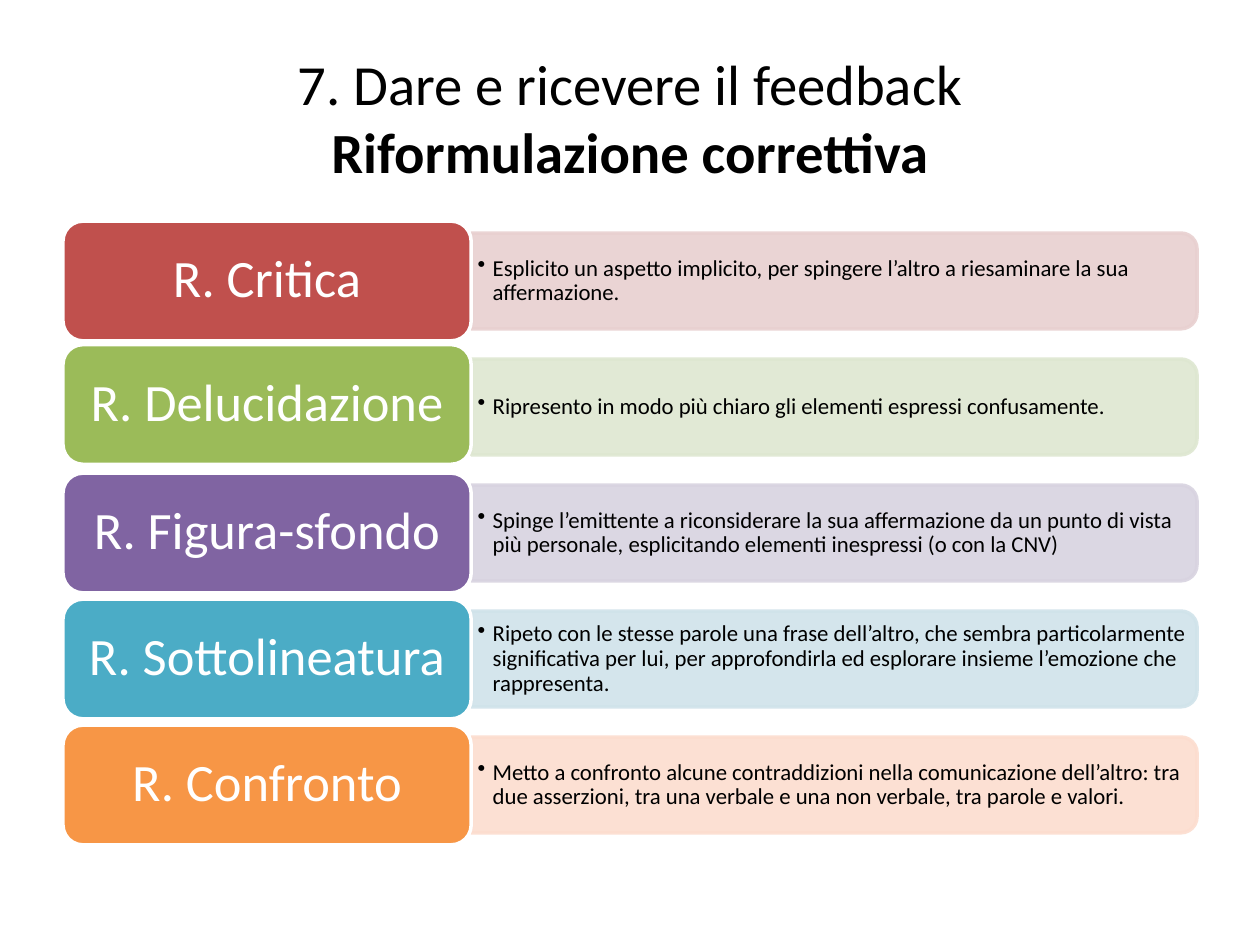
from dataclasses import dataclass

from lxml.etree import SubElement
from pptx import Presentation
from pptx.dml.color import RGBColor
from pptx.enum.shapes import MSO_SHAPE
from pptx.enum.text import MSO_ANCHOR, PP_ALIGN
from pptx.oxml.ns import qn
from pptx.util import Inches, Pt

FONT = "Calibri"
BLACK = RGBColor(0x00, 0x00, 0x00)
WHITE = RGBColor(0xFF, 0xFF, 0xFF)
RED, PALE_RED = RGBColor(0xC0, 0x50, 0x4D), RGBColor(0xE8, 0xD0, 0xD0)
GREEN, PALE_GREEN = RGBColor(0x9B, 0xBB, 0x59), RGBColor(0xDE, 0xE7, 0xD1)
PURPLE, PALE_PURPLE = RGBColor(0x80, 0x64, 0xA2), RGBColor(0xD8, 0xD3, 0xE0)
TEAL, PALE_TEAL = RGBColor(0x4B, 0xAC, 0xC6), RGBColor(0xD0, 0xE3, 0xEA)
ORANGE, PALE_ORANGE = RGBColor(0xF7, 0x96, 0x46), RGBColor(0xFC, 0xDD, 0xCF)

# Grid in inches: a label column and a band column, one row per technique
WIDTH, HEIGHT = 10, 7.5
MARGIN = 0.05 * WIDTH
LABEL_W, LABEL_H = 3.24, 0.95
BAND_X = MARGIN + LABEL_W
BAND_W, BAND_H = WIDTH - MARGIN - BAND_X, 0.76
TEXT_H = 0.69
FIRST_ROW, ROW_PITCH = 2.23, 1.0


@dataclass
class Technique:
    name: str
    description: str
    color: RGBColor
    pale: RGBColor
    label_shift: float = 0


TECHNIQUES = [
    Technique("R. Critica",
              "Esplicito un aspetto implicito, per spingere l’altro a riesaminare "
              "la sua affermazione.", RED, PALE_RED),
    Technique("R. Delucidazione",
              "Ripresento in modo più chiaro gli elementi espressi confusamente.",
              GREEN, PALE_GREEN, label_shift=-0.02),
    Technique("R. Figura-sfondo",
              "Spinge l’emittente a riconsiderare la sua affermazione da un punto di "
              "vista più personale, esplicitando elementi inespressi (o con la CNV)",
              PURPLE, PALE_PURPLE),
    Technique("R. Sottolineatura",
              "Ripeto con le stesse parole una frase dell’altro, che sembra "
              "particolarmente significativa per lui, per approfondirla ed esplorare "
              "insieme l’emozione che rappresenta.", TEAL, PALE_TEAL),
    Technique("R. Confronto",
              "Metto a confronto alcune contraddizioni nella comunicazione dell’altro: "
              "tra due asserzioni, tra una verbale e una non verbale, tra parole e "
              "valori.", ORANGE, PALE_ORANGE),
]


def add_box(s, shape_type, x: float, y: float, w: float, h: float,
            fill: RGBColor, line: RGBColor):
    sp = s.shapes.add_shape(shape_type, Inches(x), Inches(y), Inches(w), Inches(h))
    sp.shadow.inherit = False
    sp.fill.solid()
    sp.fill.fore_color.rgb = fill
    sp.line.color.rgb = line
    sp.line.width = Pt(2)
    return sp


def add_textbox(s, x: float, y: float, w: float, h: float):
    return s.shapes.add_textbox(Inches(x), Inches(y), Inches(w), Inches(h))


def write(sp, text: str, size: float, color: RGBColor, align,
          inset_x: float, inset_y: float, spacing: float):
    tf = sp.text_frame
    tf.word_wrap = True
    tf.vertical_anchor = MSO_ANCHOR.MIDDLE
    tf.margin_left = tf.margin_right = Inches(inset_x)
    tf.margin_top = tf.margin_bottom = Inches(inset_y)
    tf.text = text
    p = tf.paragraphs[0]
    p.alignment = align
    p.line_spacing = spacing
    for r in p.runs:
        r.font.name = FONT
        r.font.size = Pt(size)
        r.font.color.rgb = color
    return p


def add_bullet(p, indent: float) -> None:
    pPr = p._p.get_or_add_pPr()
    pPr.set("marL", str(Inches(indent)))
    pPr.set("indent", str(-Inches(indent)))
    SubElement(pPr, qn("a:buChar")).set("char", "•")


def set_opacity(sp, percent: int) -> None:
    for clr in sp._element.spPr.iter(qn("a:srgbClr")):
        SubElement(clr, qn("a:alpha")).set("val", str(percent * 1000))


def add_technique(s, t: Technique, mid_y: float) -> None:
    # Pale band, a top-rounded rectangle turned to face right
    mid_x = BAND_X + BAND_W / 2
    band = add_box(s, MSO_SHAPE.ROUND_2_SAME_RECTANGLE, mid_x - BAND_H / 2,
                   mid_y - BAND_W / 2, BAND_H, BAND_W, t.pale, t.pale)
    band.rotation = 90
    set_opacity(band, 90)

    # Description, kept level over the turned band
    box = add_textbox(s, BAND_X, mid_y - TEXT_H / 2, BAND_W - 0.04, TEXT_H)
    p = write(box, t.description, 13, BLACK, PP_ALIGN.LEFT, 0.05, 0.03, 0.9)
    add_bullet(p, 0.12)

    # Coloured label
    label = add_box(s, MSO_SHAPE.ROUNDED_RECTANGLE, MARGIN,
                    mid_y - LABEL_H / 2 + t.label_shift, LABEL_W, LABEL_H,
                    t.color, WHITE)
    write(label, t.name, 30, WHITE, PP_ALIGN.CENTER, 0.12, 0.06, 0.9)


def main() -> None:
    prs = Presentation()
    prs.slide_width, prs.slide_height = Inches(WIDTH), Inches(HEIGHT)
    s = prs.slides.add_slide(prs.slide_layouts[6])

    # Title
    title = add_textbox(s, MARGIN, 0.04 * HEIGHT, WIDTH - 2 * MARGIN, HEIGHT / 6)
    p = write(title, "7. Dare e ricevere il feedback\vRiformulazione correttiva",
              32.4, BLACK, PP_ALIGN.CENTER, 0.1, 0.05, 1.0)
    p.runs[-1].font.bold = True

    # Techniques
    for row, t in enumerate(TECHNIQUES):
        add_technique(s, t, FIRST_ROW + row * ROW_PITCH)

    prs.save("out.pptx")


if __name__ == "__main__":
    main()
